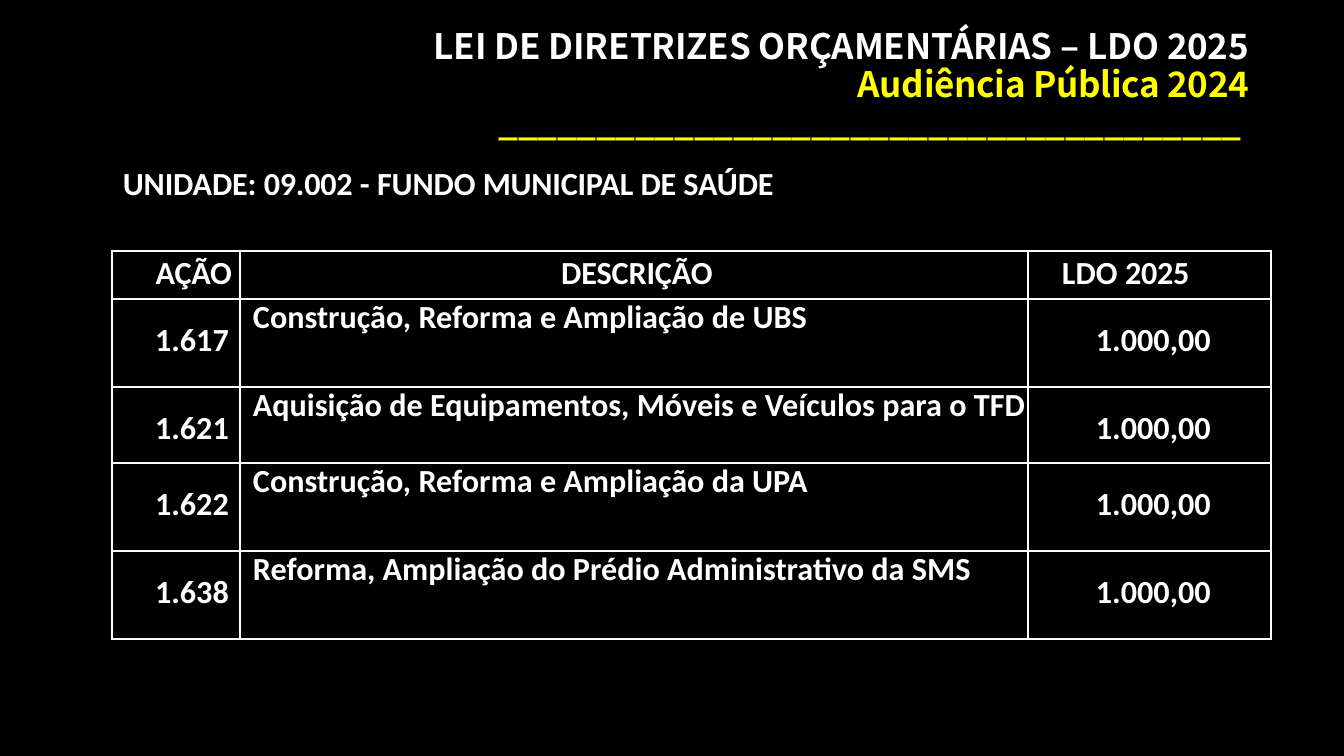
from copy import deepcopy

from lxml.etree import SubElement
from pptx import Presentation
from pptx.dml.color import RGBColor
from pptx.enum.text import MSO_ANCHOR, MSO_AUTO_SIZE, PP_ALIGN
from pptx.oxml import parse_xml
from pptx.oxml.ns import nsdecls, qn
from pptx.util import Pt

SCALE = 914400 / 100.8
WHITE, YELLOW, BLACK = "FFFFFF", "FFFF00", "000000"


def px(n):
    return round(n * SCALE)


def color(code):
    return RGBColor.from_string(code)


class Deck:
    head = "Noto Sans CJK JP"
    body = "Calibri"

    def __init__(self, wide, high):
        self.prs = Presentation()
        self.prs.slide_width, self.prs.slide_height = px(wide), px(high)
        self.slide = self.prs.slides.add_slide(self.prs.slide_layouts[5])
        fill = self.slide.background.fill
        fill.solid()
        fill.fore_color.rgb = color(BLACK)

    def add_run(self, para, text, gap, face, size, tint=WHITE):
        """Add one run; gap is its letter spacing in hundredths of a point."""
        run = para.add_run()
        run.text = text
        font = run.font
        font.name, font.size, font.bold = face, Pt(size), True
        font.color.rgb = color(tint)
        props = run._r.get_or_add_rPr()
        props.set("spc", str(gap))
        for tag in ("a:ea", "a:cs"):
            SubElement(props, qn(tag)).set("typeface", face)
        return run

    def indent(self, para, left=0, right=0):
        props = para._p.get_or_add_pPr()
        props.set("marL", str(px(left)))
        props.set("marR", str(px(right)))
        props.set("indent", "0")

    def title(self, box, lines):
        """Fill the title; each line ends in a break of the same style."""
        shape = self.slide.shapes.title
        shape.left, shape.top, shape.width, shape.height = map(px, box)
        frame = shape.text_frame
        frame.auto_size = MSO_AUTO_SIZE.NONE
        frame.word_wrap = True
        frame.vertical_anchor = MSO_ANCHOR.MIDDLE
        para = frame.paragraphs[0]
        para.alignment, para.line_spacing = PP_ALIGN.RIGHT, 0.9
        for tint, runs in lines:
            for text, gap in runs:
                run = self.add_run(para, text, gap, self.head, 25, tint)
            para.add_line_break()
            para._p[-1].append(deepcopy(run._r.rPr))
        end = SubElement(para._p, qn("a:endParaRPr"))
        end.set("sz", "2500")

    def label(self, box, runs):
        frame = self.slide.shapes.add_textbox(*map(px, box)).text_frame
        frame.word_wrap = True
        para = frame.paragraphs[0]
        self.indent(para, 1)
        for text, gap in runs:
            self.add_run(para, text, gap, self.body, 23)

    def edge(self, cell, thick):
        """Draw the four borders; the sides named in thick are heavier."""
        props = cell._tc.get_or_add_tcPr()
        for spot, side in enumerate("LRTB"):
            width = Pt(2.25 if side in thick else 1)
            props.insert(spot, parse_xml(
                f'<a:ln{side} {nsdecls("a")} w="{width}"><a:solidFill>'
                f'<a:srgbClr val="{WHITE}"/></a:solidFill></a:ln{side}>'))

    def cell(self, cell, runs, top, align, left, right, pitch, thick):
        cell.margin_left = cell.margin_right = cell.margin_bottom = 0
        cell.margin_top = px(top)
        cell.fill.background()
        para = cell.text_frame.paragraphs[0]
        para.alignment = align
        self.indent(para, left, right)
        if pitch:
            para.line_spacing = Pt(pitch)
        for text, gap in runs:
            self.add_run(para, text, gap, self.body, 23)
        self.edge(cell, thick)

    def table(self, spot, cols, rows, heads, items):
        left, top = spot
        grid = self.slide.shapes.add_table(
            len(rows), len(cols), px(left), px(top),
            px(sum(cols)), px(sum(rows))).table
        grid.first_row = grid.horz_banding = False
        for col, wide in zip(grid.columns, cols):
            col.width = px(wide)
        for row, high in zip(grid.rows, rows):
            row.height = px(high)
        start, mid, end = PP_ALIGN.LEFT, PP_ALIGN.CENTER, PP_ALIGN.RIGHT
        # top inset, alignment, left indent, right indent, line pitch
        first = [(3, end, 0, 8, None), (3, mid, 6, 0, None),
                 (3, start, 34, 0, None)]
        rest = [(22, end, 0, 11, None), (0, start, 13, 0, 27.3),
                (22, start, 68, 0, None)]
        lines = [heads] + [[[(text, 0)] for text in item] for item in items]
        for r, line in enumerate(lines):
            for c, runs in enumerate(line):
                look = rest[c] if r else first[c]
                thick = ("" if r else "T") + ("" if c else "L")
                self.cell(grid.cell(r, c), runs, *look, thick)


def main():
    deck = Deck(1344, 756)
    deck.title((100, 34, 1159, 146), [
        (WHITE, [("LEI DE ", 0), ("DIRETRIZES ORÇAMENTÁRIAS ", -10),
                 ("– LDO ", 0), ("2025", -20)]),
        (YELLOW, [("Audiência Pública 2024", -20)]),
        (YELLOW, [("_" * 38 + " ", -20)]),
    ])
    deck.label((112, 158, 943, 49), [
        ("UNIDADE: ", -10), ("09.002 ", -20), ("- ", 0), ("FUNDO ", -10),
        ("MUNICIPAL ", -20), ("DE SAÚDE", -10),
    ])
    heads = [[("AÇÃO", -20)], [("DESCRIÇÃO", -10)],
             [("LDO ", 0), ("2025", -20)]]
    acts = [
        ("1.617", "Construção, Reforma e Ampliação de UBS"),
        ("1.621", "Aquisição de Equipamentos, Móveis e Veículos para o TFD"),
        ("1.622", "Construção, Reforma e Ampliação da UPA"),
        ("1.638", "Reforma, Ampliação do Prédio Administrativo da SMS"),
    ]
    items = [(code, text, "1.000,00") for code, text in acts]
    deck.table((112, 251), (128, 788, 243), (48, 88, 76, 88, 88),
               heads, items)
    deck.prs.save("out.pptx")


if __name__ == "__main__":
    main()
